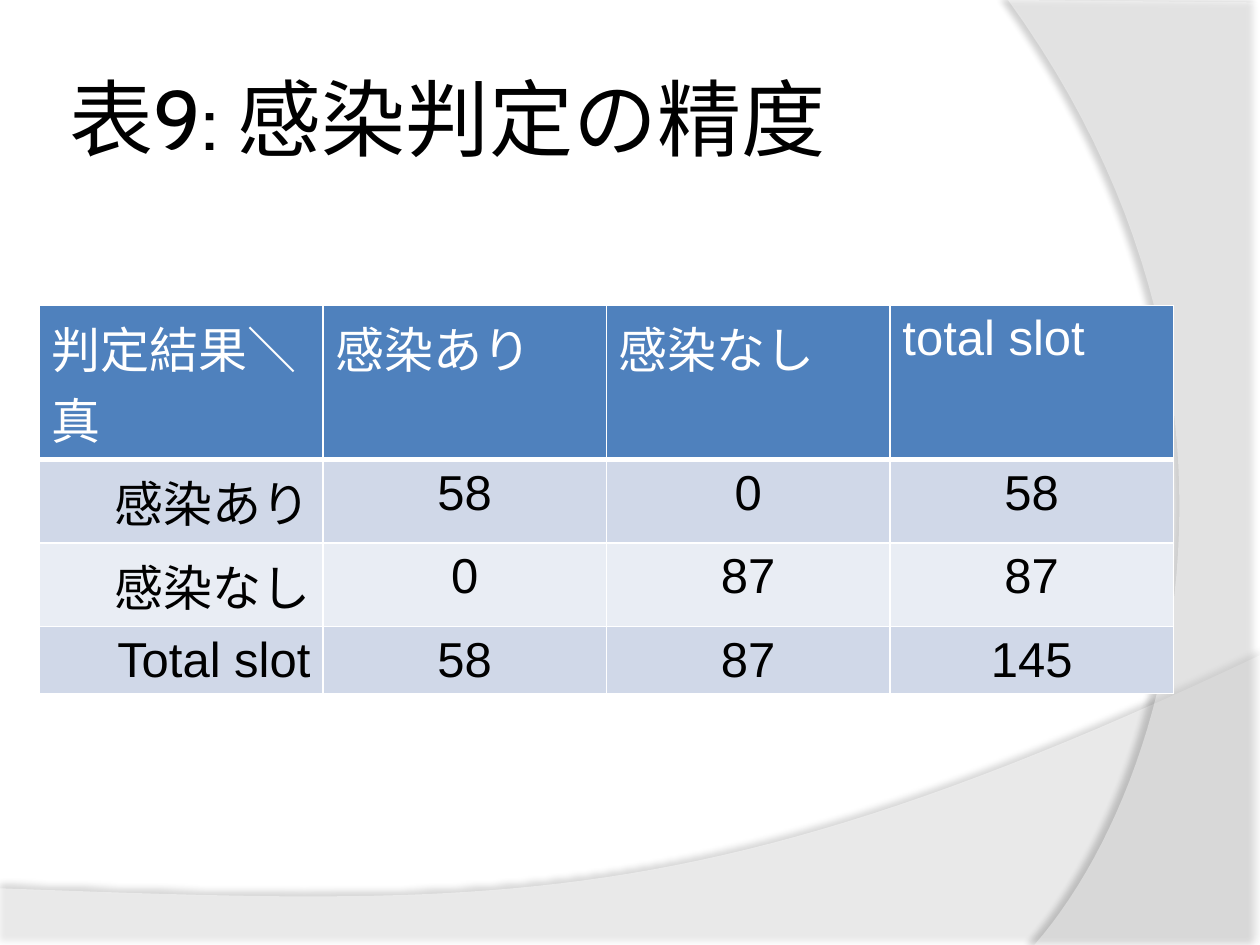
from dataclasses import dataclass

from lxml import etree
from pptx import Presentation
from pptx.dml.color import RGBColor
from pptx.enum.text import MSO_ANCHOR, PP_ALIGN
from pptx.oxml.ns import qn
from pptx.util import Pt

LEFT, CENTER, RIGHT = PP_ALIGN.LEFT, PP_ALIGN.CENTER, PP_ALIGN.RIGHT
MIDDLE = MSO_ANCHOR.MIDDLE
TITLE_ONLY = 5
CURVE_STEPS = 48


@dataclass(frozen=True)
class Theme:
    black: str = "000000"
    white: str = "FFFFFF"
    header: str = "4F81BD"
    bands: tuple[str, str] = ("D0D8E8", "E9EDF4")
    title_font: str = "Cabin"
    body_font: str = "Arial"
    title_size: int = 48
    body_size: int = 28


@dataclass(frozen=True)
class Swoosh:
    """Straight corners, then a Bezier curve from the last corner."""
    corners: list[tuple[float, float]]
    curve: list[tuple[float, float]]
    opacity: int
    shadow_opacity: int
    shadow_distance: float
    shadow_angle: int


THEME = Theme()

SWOOSHES = [
    Swoosh([(0, 507.6), (0, 540.7), (720, 540.7), (720, 374.4)],
           [(402.5, 524.9), (281.5, 517.7), (0, 507.6)], 45, 35, 3.5, 270),
    Swoosh([(720, 1.4), (720, 540), (591.1, 540)],
           [(673.2, 445.7), (733, 216), (576, 0)], 40, 45, 4, 180),
]

ROWS = [
    ("判定結果＼真", "感染あり", "感染なし", "total slot"),
    ("感染あり", "58", "0", "58"),
    ("感染なし", "0", "87", "87"),
    ("Total slot", "58", "87", "145"),
]


def add_xml(parent, tag: str, **attributes):
    return etree.SubElement(parent, qn(tag), {key: str(value) for key, value in attributes.items()})


def write_text(frame, text: str, *, font: str, size: float, color: str,
               align=LEFT, space_percent: int = 0) -> None:
    paragraph = frame.paragraphs[0]
    paragraph.alignment = align
    if space_percent:
        # Proportional spacing needs XML
        paragraph.space_before = Pt(0)
        spacing = paragraph.runs and None or paragraph._p.pPr.find(qn("a:spcBef"))
        spacing.clear()
        add_xml(spacing, "a:spcPct", val=space_percent * 1000)
    run = paragraph.add_run()
    run.text = text
    run.font.name = font
    run.font.size = Pt(size)
    run.font.bold = False
    run.font.color.rgb = RGBColor.from_string(color)


def curve_points(start: tuple[float, float], curve: list[tuple[float, float]]):
    points = [start, *curve]
    weights = (1, 3, 3, 1)
    for step in range(1, CURVE_STEPS + 1):
        t = step / CURVE_STEPS
        factors = [w * (1 - t) ** (3 - i) * t ** i for i, w in enumerate(weights)]
        yield tuple(sum(f * p[axis] for f, p in zip(factors, points)) for axis in (0, 1))


def draw_swoosh(slide, swoosh: Swoosh):
    first, *others = swoosh.corners
    outline = [*others, *curve_points(swoosh.corners[-1], swoosh.curve)]
    builder = slide.shapes.build_freeform(Pt(first[0]), Pt(first[1]))
    builder.add_line_segments([(Pt(x), Pt(y)) for x, y in outline], close=True)
    shape = builder.convert_to_shape()
    shape.line.fill.background()
    shape.fill.solid()
    shape.fill.fore_color.rgb = RGBColor.from_string(THEME.white)
    shape.shadow.inherit = False
    # Transparency and soft shadow
    properties = shape.element.spPr
    add_xml(properties.find(qn("a:solidFill"))[0], "a:alpha", val=swoosh.opacity * 1000)
    shadow = add_xml(properties.find(qn("a:effectLst")), "a:outerShdw", blurRad=Pt(4),
                     dist=Pt(swoosh.shadow_distance), dir=swoosh.shadow_angle * 60000,
                     algn="ctr", rotWithShape=0)
    color = add_xml(shadow, "a:srgbClr", val=THEME.black)
    add_xml(color, "a:alpha", val=swoosh.shadow_opacity * 1000)
    return shape


def set_borders(cell, bottom_width: float) -> None:
    properties = cell._tc.get_or_add_tcPr()
    widths = {"a:lnL": 1, "a:lnR": 1, "a:lnT": 1, "a:lnB": bottom_width}
    for position, (tag, width) in enumerate(widths.items()):
        line = add_xml(properties, tag, w=Pt(width))
        add_xml(add_xml(line, "a:solidFill"), "a:srgbClr", val=THEME.white)
        properties.insert(position, line)


def draw_table(slide, rows: list[tuple[str, ...]]) -> None:
    row_height = 29.2
    table = slide.shapes.add_table(len(rows), len(rows[0]), Pt(22.5), Pt(174.5),
                                   Pt(648), Pt(row_height * len(rows))).table
    for row_index, row in enumerate(rows):
        is_header = row_index == 0
        fill = THEME.header if is_header else THEME.bands[(row_index - 1) % 2]
        for column_index, text in enumerate(row):
            cell = table.cell(row_index, column_index)
            cell.fill.solid()
            cell.fill.fore_color.rgb = RGBColor.from_string(fill)
            set_borders(cell, 3 if is_header else 1)
            align = LEFT if is_header else RIGHT if column_index == 0 else CENTER
            write_text(cell.text_frame, text, font=THEME.body_font, size=THEME.body_size,
                       color=THEME.white if is_header else THEME.black,
                       align=align, space_percent=20)


def draw_title(slide, text: str):
    title = slide.shapes.title
    title.left, title.top, title.width, title.height = Pt(36), Pt(21.6), Pt(648), Pt(90)
    frame = title.text_frame
    frame.vertical_anchor = MIDDLE
    frame.margin_left = frame.margin_right = frame.margin_top = frame.margin_bottom = Pt(3.6)
    write_text(frame, text, font=THEME.title_font, size=THEME.title_size, color=THEME.black)
    return title


def main() -> None:
    presentation = Presentation()
    presentation.slide_width, presentation.slide_height = Pt(720), Pt(540)
    slide = presentation.slides.add_slide(presentation.slide_layouts[TITLE_ONLY])

    title = draw_title(slide, "表9: 感染判定の精度")
    # Background swooshes go behind the title
    for swoosh in SWOOSHES:
        title.element.addprevious(draw_swoosh(slide, swoosh).element)
    draw_table(slide, ROWS)
    presentation.save("out.pptx")


if __name__ == "__main__":
    main()
